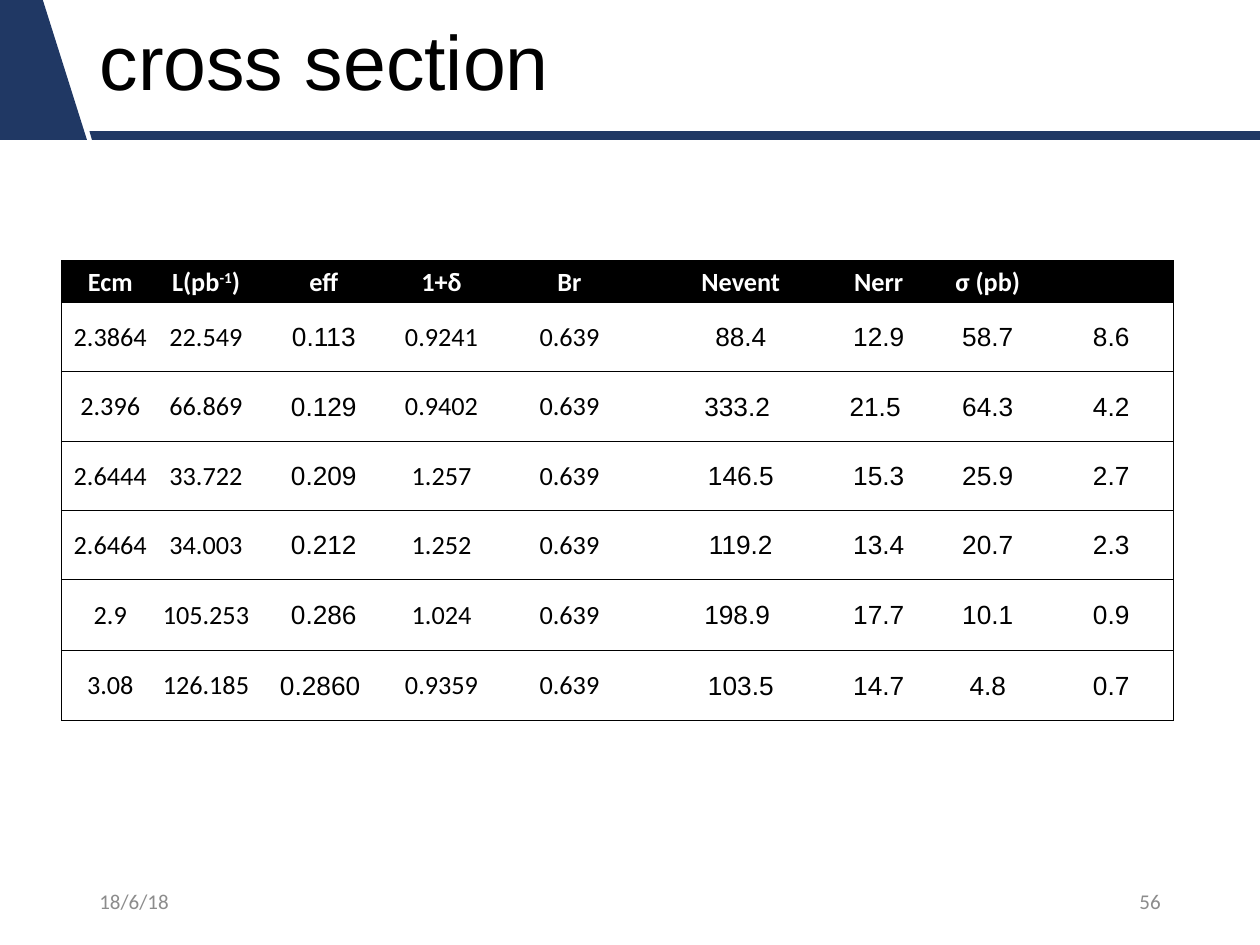
from lxml import etree
from pptx import Presentation
from pptx import util as u
from pptx.dml.color import RGBColor
from pptx.enum import text
from pptx.oxml import ns

NAVY = RGBColor(0x20, 0x38, 0x64)
BLACK = RGBColor(0, 0, 0)
WHITE = RGBColor(0xFF, 0xFF, 0xFF)
GREY = RGBColor(0x8C, 0x8C, 0x8C)

HEADER = ["Ecm", ("L(pb", "-1", ")"), "eff", "1+δ", "Br", "Nevent", "Nerr", "σ (pb)", ""]
RESULTS = [
    ["2.3864", "22.549", "0.113", "0.9241", "0.639", "88.4", "12.9", "58.7", "8.6"],
    ["2.396", "66.869", "0.129", "0.9402", "0.639", "333.2 ", "21.5 ", "64.3", "4.2"],
    ["2.6444", "33.722", "0.209", "1.257", "0.639", "146.5", "15.3", "25.9", "2.7"],
    ["2.6464", "34.003", "0.212", "1.252", "0.639", "119.2", "13.4", "20.7", "2.3"],
    ["2.9", "105.253", "0.286", "1.024", "0.639", "198.9 ", "17.7", "10.1", "0.9"],
    ["3.08", "126.185", "0.2860 ", "0.9359", "0.639", "103.5", "14.7", "4.8", "0.7"],
]
COLUMN_WIDTHS = [0.77, 0.75, 1.12, 0.75, 1.28, 1.44, 0.75, 0.98, 0.98]
ROW_HEIGHTS = [0.33, 0.55, 0.55, 0.55, 0.55, 0.56, 0.56]
ARIAL_COLUMNS = {2, 5, 6, 7, 8}


class SlideStyle:
    """Holds the style and the current slide, and draws each kind of element."""

    def __init__(self, page):
        self.page = page
        self.cell_format = {
            "margin_left": u.Inches(0.01),
            "margin_right": u.Inches(0.01),
            "margin_top": u.Inches(0.01),
            "margin_bottom": 0,
            "vertical_anchor": text.MSO_ANCHOR.MIDDLE,
        }

    def apply(self, target, values):
        for name, value in values.items():
            setattr(target, name, value)

    def add_spans(self, para, content, font, size, color, align, bold=False):
        para.alignment = align
        parts = content if isinstance(content, tuple) else (content,)
        for index, part in enumerate(parts):
            span = para.add_run()
            span.text = part
            self.apply(span.font, {"name": font, "size": u.Pt(size), "bold": bold})
            span.font.color.rgb = color
            if index == 1:
                span.font._element.set("baseline", "30000")

    def band(self, points):
        start, *rest = [(u.Inches(x), u.Inches(y)) for x, y in points]
        builder = self.page.shapes.build_freeform(*start)
        builder.add_line_segments(rest, close=True)
        shape = builder.convert_to_shape()
        shape.shadow.inherit = False
        shape.fill.solid()
        shape.fill.fore_color.rgb = NAVY
        shape.line.fill.background()

    def title(self, content, left, top, width, height):
        box = self.page.shapes.title
        self.place(box, left, top, width, height)
        para = box.text_frame.paragraphs[0]
        para.line_spacing = 0.9
        self.add_spans(para, content, "Arial", 44, BLACK, text.PP_ALIGN.LEFT)

    def place(self, box, left, top, width, height):
        sides = {"left": left, "top": top, "width": width, "height": height}
        self.apply(box, {name: u.Inches(value) for name, value in sides.items()})
        frame_format = {"word_wrap": True, "vertical_anchor": text.MSO_ANCHOR.MIDDLE}
        self.apply(box.text_frame, frame_format)

    def footer(self, content, left, align):
        box = self.page.shapes.add_textbox(0, 0, 0, 0)
        self.place(box, left, 6.95, 2.25, 0.4)
        self.add_spans(box.text_frame.paragraphs[0], content, "Calibri", 12, GREY, align)

    def borders(self, cell, visible):
        properties = cell._tc.get_or_add_tcPr()
        for index, side in enumerate("LRTB"):
            line = etree.Element(ns.qn(f"a:ln{side}"), w=str(u.Pt(0.5)))
            if side in visible:
                fill = etree.SubElement(line, ns.qn("a:solidFill"))
                etree.SubElement(fill, ns.qn("a:srgbClr"), val=str(BLACK))
            else:
                etree.SubElement(line, ns.qn("a:noFill"))
            properties.insert(index, line)

    def table(self, rows, left, top):
        width, height = sum(COLUMN_WIDTHS), sum(ROW_HEIGHTS)
        box = [u.Inches(value) for value in (left, top, width, height)]
        grid = self.page.shapes.add_table(len(rows), len(rows[0]), *box).table
        self.apply(grid, {"first_row": False, "horz_banding": False})
        for column, size in zip(grid.columns, COLUMN_WIDTHS):
            column.width = u.Inches(size)
        for row, size in zip(grid.rows, ROW_HEIGHTS):
            row.height = u.Inches(size)
        last = len(COLUMN_WIDTHS) - 1
        for r, values in enumerate(rows):
            for c, value in enumerate(values):
                cell = grid.cell(r, c)
                self.apply(cell, self.cell_format)
                is_header = r == 0
                if is_header:
                    cell.fill.solid()
                    cell.fill.fore_color.rgb = BLACK
                else:
                    cell.fill.background()
                self.borders(cell, "TB" + "L" * (c == 0) + "R" * (c == last))
                font = "Arial" if c in ARIAL_COLUMNS and not is_header else "Calibri"
                color = WHITE if is_header else BLACK
                if value:
                    para = cell.text_frame.paragraphs[0]
                    self.add_spans(para, value, font, 15, color, text.PP_ALIGN.CENTER, is_header)


def main():
    deck = Presentation()
    deck.slide_width, deck.slide_height = u.Inches(10), u.Inches(7.5)
    style = SlideStyle(deck.slides.add_slide(deck.slide_layouts[5]))
    style.band([(0.34, 0), (0.69, 1.11), (0, 1.11), (0, 0)])
    style.band([(0.71, 1.04), (10, 1.04), (10, 1.11), (0.73, 1.11)])
    style.title("cross section", 0.69, 0, 9.31, 1.04)
    style.table([HEADER] + RESULTS, 0.49, 2.07)
    style.footer("18/6/18", 0.69, text.PP_ALIGN.LEFT)
    style.footer("56", 7.06, text.PP_ALIGN.RIGHT)
    deck.save("out.pptx")


if __name__ == "__main__":
    main()
